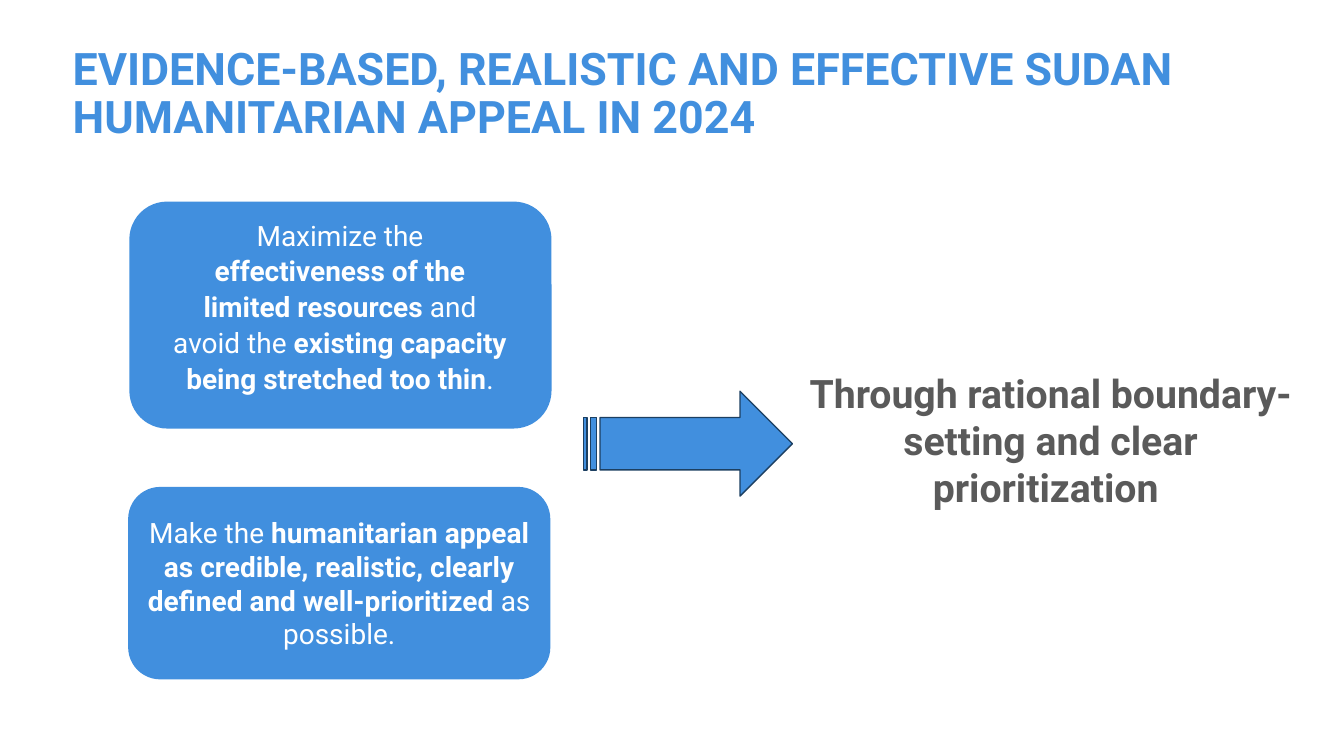
from pptx import Presentation
from pptx.dml.color import RGBColor
from pptx.enum.shapes import MSO_SHAPE as Kind
from pptx.enum.text import MSO_ANCHOR as Anchor, PP_ALIGN as Align
from pptx.util import Cm, Pt

HUES = {"blue": "418FDE", "navy": "1C3F61", "gray": "5A5A5A", "white": "FFFFFF"}


def write(shape, *runs, size=20, hue="white", align=Align.CENTER,
          anchor=Anchor.TOP, pad=None, lead=None, after=None):
    """Fill a shape with one paragraph of (text, bold) runs."""
    frame = shape.text_frame
    frame.word_wrap = True
    frame.vertical_anchor = anchor
    if pad is not None:
        frame.margin_left = frame.margin_right = Cm(pad)
        frame.margin_top = frame.margin_bottom = Cm(pad)
    para = frame.paragraphs[0]
    para.alignment = align
    para.line_spacing = lead
    para.space_after = after
    for text, bold in runs:
        run = para.add_run()
        run.text = text
        run.font.name = "Roboto"
        run.font.size = Pt(size)
        run.font.bold = bold
        run.font.color.rgb = RGBColor.from_string(HUES[hue])


def draw(home, kind, *place, line=None):
    """Add a blue shape to a slide's or group's shapes; place is in cm."""
    shape = home.add_shape(kind, *map(Cm, place))
    shape.shadow.inherit = False
    shape.fill.solid()
    shape.fill.fore_color.rgb = RGBColor.from_string(HUES["blue"])
    if line:
        shape.line.color.rgb = RGBColor.from_string(HUES[line])
        shape.line.width = Pt(1)
    else:
        shape.line.fill.background()
    return shape


deck = Presentation()
deck.slide_width, deck.slide_height = Cm(33.87), Cm(19.05)
slide = deck.slides.add_slide(deck.slide_layouts[5])
parts = slide.shapes

title = parts.title
title.left, title.top, title.width, title.height = map(Cm, (1.83, 1.07, 28.55, 2.64))
write(title, ("EVIDENCE-BASED, REALISTIC AND EFFECTIVE SUDAN HUMANITARIAN APPEAL IN 2024", True),
      size=32, hue="blue", align=Align.LEFT, anchor=Anchor.MIDDLE, pad=0, lead=0.9)

appeal = draw(parts, Kind.ROUNDED_RECTANGLE, 3.23, 12.27, 10.64, 4.85)
write(appeal, ("Make the ", False),
      ("humanitarian appeal as credible, realistic, clearly defined and well-prioritized ", True),
      ("as possible.", False), anchor=Anchor.MIDDLE)

goal = parts.add_textbox(Cm(19.96), Cm(9.19), Cm(13.03), Cm(3.84))
write(goal, ("Through rational boundary-setting and clear prioritization ", True),
      size=28, hue="gray")

group = parts.add_group_shape().shapes
draw(group, Kind.ROUNDED_RECTANGLE, 3.26, 5.08, 10.64, 5.72)
means = group.add_textbox(Cm(4.01), Cm(5.31), Cm(9.12), Cm(5.66))
write(means, ("Maximize the ", False),
      ("effectiveness of the limited resources ", True),
      ("and avoid the ", False),
      ("existing capacity being stretched too thin", True),
      (".", False), lead=1.07, after=Pt(8))

draw(parts, Kind.STRIPED_RIGHT_ARROW, 14.71, 9.86, 5.26, 2.64, line="navy")

deck.save("out.pptx")
